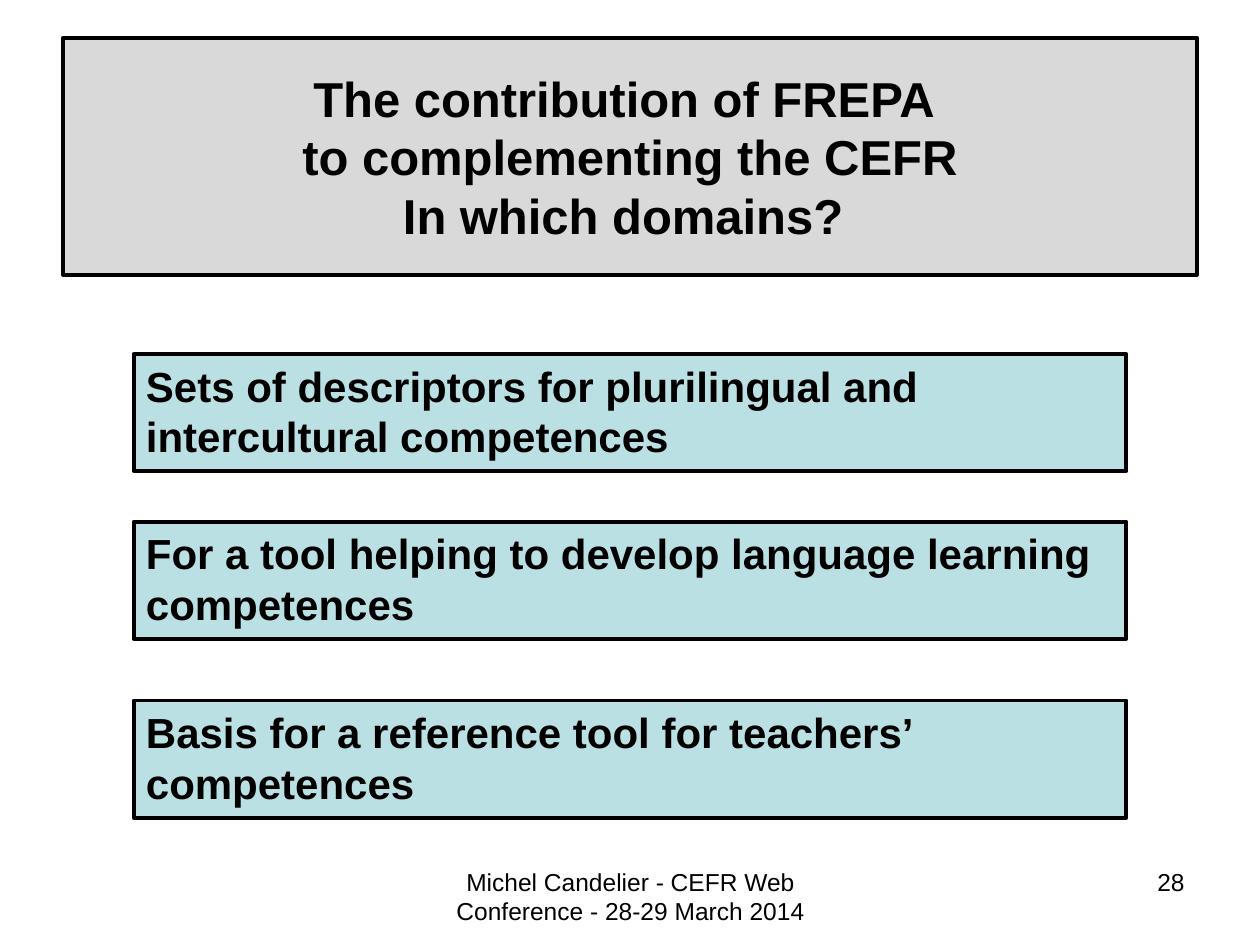
from pptx import Presentation
from pptx.dml.color import RGBColor
from pptx.enum import shapes, text
from pptx.util import Inches, Pt

BLACK = RGBColor(0x00, 0x00, 0x00)
GREY = RGBColor(0xD9, 0xD9, 0xD9)
PALE_BLUE = RGBColor(0xBB, 0xE0, 0xE3)

TITLE = "The contribution of FREPA \vto complementing the CEFR\vIn which domains? "
DOMAINS = [
    (2.81, "Sets of descriptors for plurilingual and intercultural competences"),
    (4.14, "For a tool helping to develop language learning competences"),
    (5.56, "Basis for a reference tool for teachers’ competences"),
]


def write(sp, words, size, bold=False, align=text.PP_ALIGN.LEFT,
          anchor=text.MSO_ANCHOR.TOP):
    tf = sp.text_frame
    tf.word_wrap = True
    tf.vertical_anchor = anchor
    p = tf.paragraphs[0]
    p.text = words
    p.alignment = align
    for r in p.runs:
        r.font.name = "Arial"
        r.font.size = Pt(size)
        r.font.bold = bold
        r.font.color.rgb = BLACK


def add_panel(s, x, y, w, h, fill):
    sp = s.shapes.add_shape(shapes.MSO_SHAPE.RECTANGLE,
                            Inches(x), Inches(y), Inches(w), Inches(h))
    sp.shadow.inherit = False
    sp.fill.solid()
    sp.fill.fore_color.rgb = fill
    sp.line.color.rgb = BLACK
    sp.line.width = Pt(2.25)
    return sp


def add_title(s, x, y, w, h):
    write(add_panel(s, x, y, w, h, GREY), TITLE, 28, bold=True,
          align=text.PP_ALIGN.CENTER, anchor=text.MSO_ANCHOR.MIDDLE)


def add_domains(s, x, w, h):
    for y, words in DOMAINS:
        write(add_panel(s, x, y, w, h, PALE_BLUE), words, 24, bold=True)


def add_footer(s, y, h):
    for x, w, words, align in [
        (3.42, 3.17, "Michel Candelier - CEFR Web Conference - 28-29 March 2014",
         text.PP_ALIGN.CENTER),
        (7.17, 2.33, "28", text.PP_ALIGN.RIGHT),
    ]:
        sp = s.shapes.add_textbox(Inches(x), Inches(y), Inches(w), Inches(h))
        write(sp, words, 14, align=align)


def main():
    prs = Presentation()
    prs.slide_width, prs.slide_height = Inches(10), Inches(7.5)
    s = prs.slides.add_slide(prs.slide_layouts[6])
    add_footer(s, 6.83, 0.52)
    add_title(s, 0.5, 0.3, 9, 1.88)
    add_domains(s, 1.06, 7.88, 0.93)
    prs.save("out.pptx")


if __name__ == "__main__":
    main()
